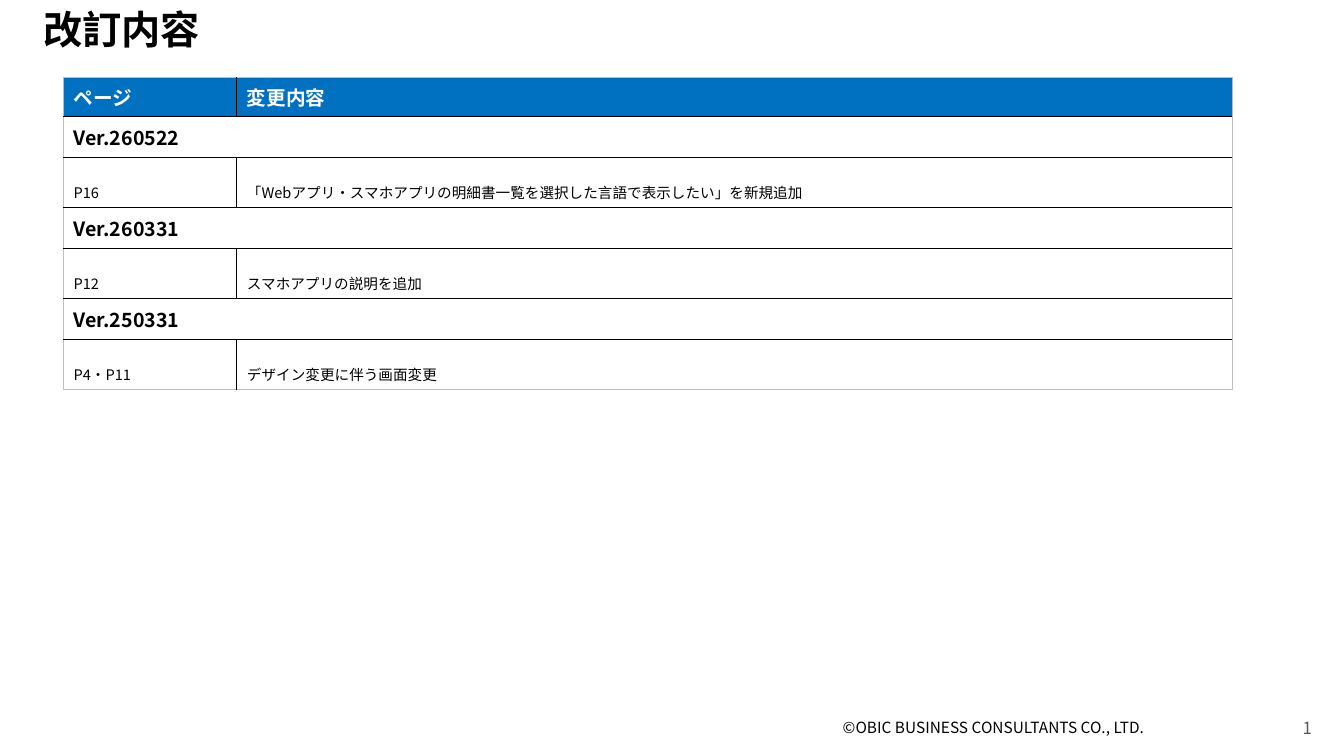
from lxml import etree
from pptx import Presentation
from pptx.dml.color import RGBColor
from pptx.enum.text import MSO_ANCHOR, PP_ALIGN
from pptx.oxml.ns import qn
from pptx.util import Inches, Pt

LEFT, RIGHT = PP_ALIGN.LEFT, PP_ALIGN.RIGHT
TOP, MIDDLE = MSO_ANCHOR.TOP, MSO_ANCHOR.MIDDLE

BLACK = RGBColor(0x00, 0x00, 0x00)
WHITE = RGBColor(0xFF, 0xFF, 0xFF)
BLUE = RGBColor(0x00, 0x70, 0xC0)
DARK_GRAY = RGBColor(0x59, 0x59, 0x59)
EDGE_GRAY = RGBColor(0xBF, 0xBF, 0xBF)

WIDTH, HEIGHT = 13.33, 7.5
TITLE_ONLY_LAYOUT = 5
COLUMN_WIDTHS = (1.72, 9.87)
HEADER_HEIGHT, ROW_HEIGHT = 0.34, 0.41

HEADINGS = ("ページ", "変更内容")
REVISIONS = (
    ("Ver.260522", "P16", "「Webアプリ・スマホアプリの明細書一覧を選択した言語で表示したい」を新規追加"),
    ("Ver.260331", "P12", "スマホアプリの説明を追加"),
    ("Ver.250331", "P4・P11", "デザイン変更に伴う画面変更"),
)


class RevisionSlide:
    font_name = "Noto Sans CJK JP"

    def __init__(self, presentation):
        layout = presentation.slide_layouts[TITLE_ONLY_LAYOUT]
        self.slide = presentation.slides.add_slide(layout)

    def set_text(self, frame, text, size, color, bold=False, align=LEFT, baseline=0):
        paragraph = frame.paragraphs[0]
        paragraph.text = text
        paragraph.alignment = align
        font = paragraph.font
        font.name, font.size, font.bold = self.font_name, Pt(size), bold
        font.color.rgb = color
        # East Asian typeface and baseline shift
        properties = paragraph._p.pPr.find(qn("a:defRPr"))
        latin = properties.find(qn("a:latin"))
        east_asian = etree.Element(qn("a:ea"), typeface=self.font_name)
        latin.addnext(east_asian)
        if baseline:
            properties.set("baseline", str(baseline * 1000))
        return paragraph

    def title(self, text, left, top, width, height):
        shape = self.slide.shapes.title
        shape.left, shape.top = Inches(left), Inches(top)
        shape.width, shape.height = Inches(width), Inches(height)
        frame = shape.text_frame
        frame.vertical_anchor, frame.margin_top = TOP, 0
        self.set_text(frame, text, 28, BLACK, bold=True).line_spacing = 0.9

    def footer(self, text, left, width, size, color, align=LEFT):
        box = self.slide.shapes.add_textbox(
            Inches(left), Inches(HEIGHT - 0.4), Inches(width), Inches(0.4))
        frame = box.text_frame
        frame.word_wrap, frame.margin_top = True, Inches(0.02)
        self.set_text(frame, text, size, color, align=align)

    def borders(self, cell, row, column, last_row, last_column):
        properties = cell._tc.get_or_add_tcPr()
        outer_sides = (("lnL", column == 0), ("lnR", column == last_column),
                       ("lnT", row == 0), ("lnB", row == last_row))
        for position, (side, outer) in enumerate(outer_sides):
            line = etree.Element(qn(f"a:{side}"), w=str(Pt(0.5 if outer else 1)))
            fill = etree.SubElement(line, qn("a:solidFill"))
            color = EDGE_GRAY if outer else BLACK
            etree.SubElement(fill, qn("a:srgbClr"), val=str(color))
            properties.insert(position, line)

    def table(self, left, top):
        row_count = 1 + 2 * len(REVISIONS)
        heights = [HEADER_HEIGHT] + [ROW_HEIGHT] * (row_count - 1)
        table = self.slide.shapes.add_table(
            row_count, len(COLUMN_WIDTHS), Inches(left), Inches(top),
            Inches(sum(COLUMN_WIDTHS)), Inches(sum(heights))).table
        table.horz_banding = False
        for column, width in zip(table.columns, COLUMN_WIDTHS):
            column.width = Inches(width)
        for row, height in zip(table.rows, heights):
            row.height = Inches(height)

        # Fills and rules
        for row in range(row_count):
            version_row = row % 2 == 1
            if version_row:
                table.cell(row, 0).merge(table.cell(row, 1))
            for column in range(len(COLUMN_WIDTHS)):
                cell = table.cell(row, column)
                cell.vertical_anchor = MIDDLE
                cell.fill.solid()
                cell.fill.fore_color.rgb = WHITE if row else BLUE
                edge_column = column if version_row else 1
                self.borders(cell, row, column, row_count - 1, edge_column)

        # Headings, then a version row and a change row for each revision
        for column, heading in enumerate(HEADINGS):
            self.set_text(table.cell(0, column).text_frame, heading, 14, WHITE, bold=True)
        for index, (version, *change) in enumerate(REVISIONS):
            row = 1 + 2 * index
            self.set_text(table.cell(row, 0).text_frame, version, 14, BLACK, bold=True)
            for column, text in enumerate(change):
                self.set_text(table.cell(row + 1, column).text_frame, text, 18, BLACK,
                              baseline=-25)


def main():
    presentation = Presentation()
    presentation.slide_width = Inches(WIDTH)
    presentation.slide_height = Inches(HEIGHT)
    page = RevisionSlide(presentation)
    page.title("改訂内容", 0.33, 0.11, 12.55, 0.65)
    page.table(0.63, 0.77)
    page.footer("©OBIC BUSINESS CONSULTANTS CO., LTD.", 8.26, 4.5, 11, BLACK)
    page.footer("1", 10.11, 3, 12, DARK_GRAY, RIGHT)
    presentation.save("out.pptx")


if __name__ == "__main__":
    main()
